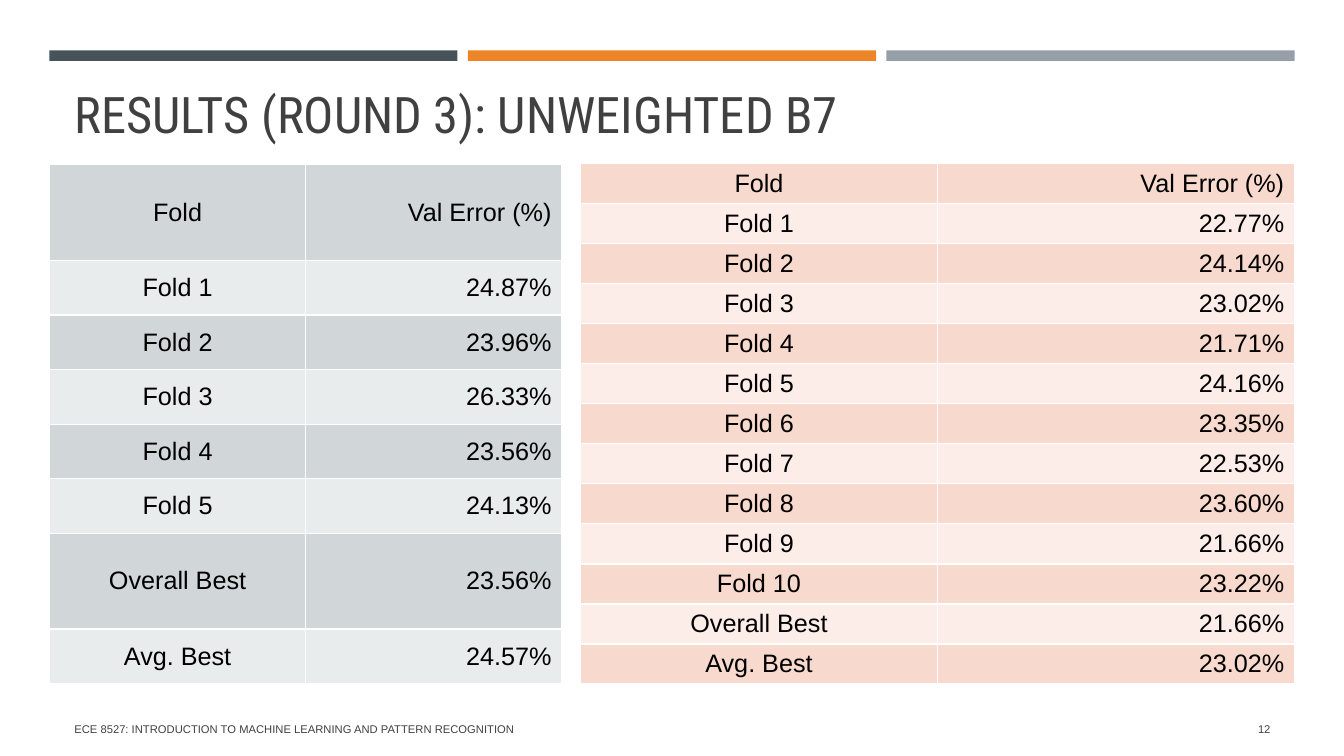
from dataclasses import dataclass

from lxml.etree import SubElement
from pptx import Presentation
from pptx.dml.color import RGBColor
from pptx.enum.shapes import MSO_SHAPE as Shape
from pptx.enum.text import MSO_ANCHOR as Anchor, PP_ALIGN as Align
from pptx.oxml.ns import qn
from pptx.util import Pt


@dataclass(frozen=True)
class Theme:
    heading_font: str = "Roboto Condensed"
    body_font: str = "Arial"
    title_size: int = 36
    table_size: int = 18
    footer_size: int = 8
    background: str = "FFFFFF"
    border: str = "FFFFFF"
    heading: str = "404040"
    table_text: str = "000000"
    accents: tuple = ("465359", "ED8428", "969FA7")
    gray_bands: tuple = ("D1D6D9", "E9ECED")
    peach_bands: tuple = ("F8D9CD", "FCEDE8")


class SlideBuilder:
    def __init__(self, slide, theme):
        self.slide = slide
        self.theme = theme
        self.paint(slide.background.fill, theme.background)

    def paint(self, fill, color):
        fill.solid()
        fill.fore_color.rgb = RGBColor.from_string(color)

    def set_text(self, frame, text, font, size, color, align=Align.LEFT):
        frame.text = text
        paragraph = frame.paragraphs[0]
        paragraph.alignment = align
        for run in paragraph.runs:
            run.font.name = font
            run.font.size = Pt(size)
            run.font.color.rgb = RGBColor.from_string(color)
        return paragraph

    def title(self, text, left, top, width, height):
        shape = self.slide.shapes.title
        shape.left, shape.top = Pt(left), Pt(top)
        shape.width, shape.height = Pt(width), Pt(height)
        frame = shape.text_frame
        frame.vertical_anchor = Anchor.BOTTOM
        frame.word_wrap = True
        theme = self.theme
        paragraph = self.set_text(frame, text, theme.heading_font, theme.title_size, theme.heading)
        paragraph.line_spacing = 0.9

    def bar(self, color, left, top, width, height):
        shape = self.slide.shapes.add_shape(
            Shape.RECTANGLE, Pt(left), Pt(top), Pt(width), Pt(height))
        shape.shadow.inherit = False
        self.paint(shape.fill, color)
        shape.line.fill.background()

    def footer(self, text, left, top, width, height, align=Align.LEFT):
        box = self.slide.shapes.add_textbox(Pt(left), Pt(top), Pt(width), Pt(height))
        frame = box.text_frame
        frame.word_wrap = True
        frame.vertical_anchor = Anchor.MIDDLE
        theme = self.theme
        self.set_text(frame, text, theme.body_font, theme.footer_size, theme.heading, align)

    def outline(self, cell):
        properties = cell._tc.get_or_add_tcPr()
        for side in ("lnL", "lnR", "lnT", "lnB"):
            line = SubElement(properties, qn(f"a:{side}"), w=str(Pt(1)))
            fill = SubElement(line, qn("a:solidFill"))
            SubElement(fill, qn("a:srgbClr"), val=self.theme.border)

    def table(self, rows, bands, left, top, width, heights):
        frame = self.slide.shapes.add_table(
            len(rows), 2, Pt(left), Pt(top), Pt(width), Pt(sum(heights)))
        table = frame.table
        table.first_row = table.horz_banding = False
        for column in table.columns:
            column.width = Pt(width / 2)
        theme = self.theme
        for index, (values, height) in enumerate(zip(rows, heights)):
            table.rows[index].height = Pt(height)
            for column, (text, align) in enumerate(zip(values, (Align.CENTER, Align.RIGHT))):
                cell = table.cell(index, column)
                cell.vertical_anchor = Anchor.MIDDLE
                self.outline(cell)
                self.paint(cell.fill, bands[index % 2])
                self.set_text(cell.text_frame, text, theme.body_font,
                              theme.table_size, theme.table_text, align)


def fold_rows(errors, overall, average):
    folds = [(f"Fold {number}", error) for number, error in enumerate(errors, 1)]
    rows = [*folds, ("Overall Best", overall), ("Avg. Best", average)]
    return [("Fold", "Val Error (%)")] + [(name, f"{error:.2f}%") for name, error in rows]


def main():
    presentation = Presentation()
    presentation.slide_width, presentation.slide_height = Pt(960), Pt(540)
    theme = Theme()
    slide = presentation.slides.add_slide(presentation.slide_layouts[5])
    builder = SlideBuilder(slide, theme)

    builder.title("RESULTS (ROUND 3): UNWEIGHTED B7", 46, 57, 869, 49.5)
    for index, color in enumerate(theme.accents):
        builder.bar(color, 35.2 + index * 299, 36, 291.6, 7.5)

    five_folds = fold_rows([24.87, 23.96, 26.33, 23.56, 24.13], 23.56, 24.57)
    ten_folds = fold_rows(
        [22.77, 24.14, 23.02, 21.71, 24.16, 23.35, 22.53, 23.60, 21.66, 23.22], 21.66, 23.02)
    tall, short = 68.4, 39
    builder.table(five_folds, theme.gray_bands, 35.4, 117.6, 365.8,
                  [tall] + [short] * 5 + [tall, short])
    builder.table(ten_folds, theme.peach_bands, 414.7, 116.8, 509.8, [28.62] * len(ten_folds))

    builder.footer("12", 831.6, 506, 83, 29, Align.RIGHT)
    builder.footer("ECE 8527: INTRODUCTION TO MACHINE LEARNING AND PATTERN RECOGNITION",
                   46, 506, 544, 29)
    presentation.save("out.pptx")


if __name__ == "__main__":
    main()
